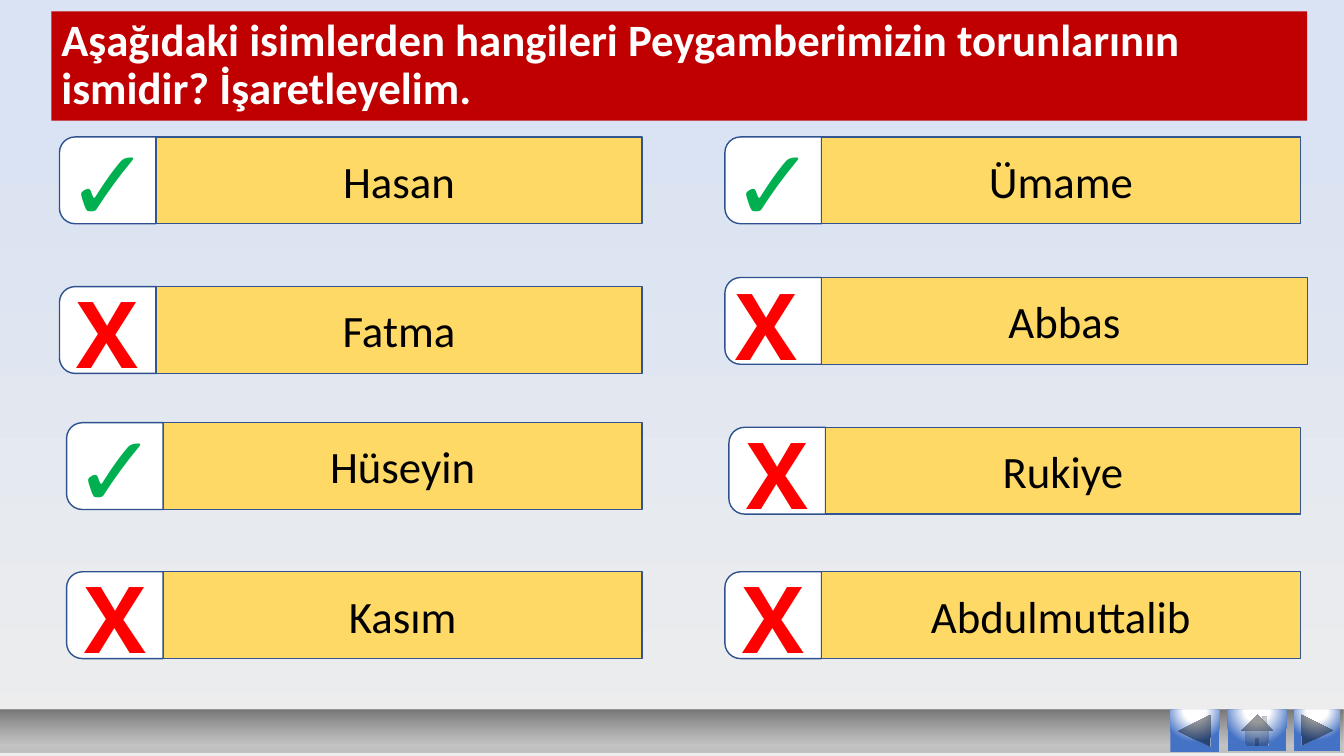
from dataclasses import dataclass
from typing import NamedTuple

from lxml import etree
from pptx import Presentation
from pptx.dml.color import RGBColor
from pptx.enum.shapes import MSO_SHAPE
from pptx.enum.text import MSO_ANCHOR, PP_ALIGN
from pptx.oxml.ns import qn
from pptx.util import Pt

RECTANGLE = MSO_SHAPE.RECTANGLE
ROUNDED_END = MSO_SHAPE.ROUND_2_SAME_RECTANGLE
BACK = MSO_SHAPE.ACTION_BUTTON_BACK_OR_PREVIOUS
HOME = MSO_SHAPE.ACTION_BUTTON_HOME
FORWARD = MSO_SHAPE.ACTION_BUTTON_FORWARD_OR_NEXT
MIDDLE, TOP = MSO_ANCHOR.MIDDLE, MSO_ANCHOR.TOP
LEFT, CENTER = PP_ALIGN.LEFT, PP_ALIGN.CENTER


class Box(NamedTuple):
    left: float
    top: float
    width: float
    height: float

    def lengths(self):
        return [Pt(value) for value in self]


class TextStyle(NamedTuple):
    font: str
    size: float
    color: str
    bold: bool
    align: PP_ALIGN


class Mark(NamedTuple):
    text: str
    style: TextStyle
    offset: Box
    wrap: bool


@dataclass(frozen=True)
class Theme:
    title_fill: str = "C00000"
    name_fill: str = "FFD966"
    name_line: str = "325491"
    check_fill: str = "FFFFFF"
    check_line: str = "2F528F"
    title: TextStyle = TextStyle("Calibri", 32, "FFFFFF", True, LEFT)
    name: TextStyle = TextStyle("Calibri", 32, "000000", False, CENTER)
    right: TextStyle = TextStyle("Roboto Slab", 72, "00B050", True, CENTER)
    wrong: TextStyle = TextStyle("Open Sans", 66, "FF0000", True, CENTER)
    background: tuple = ((0, "EDEDED", 100), (84, "DAE3F3", 100))
    bar: tuple = ((0, "C0C0C0", 100), (17, "B3B3B3", 70), (100, "777777", 100))
    button: tuple = ((0, "FFFFFF", 100), (35, "FFFFFF", 100), (100, "4472C4", 100))


THEME = Theme()
CARD_HEIGHT = 62
CHECK_WIDTH = 69
RIGHT = Mark("✓", THEME.right, Box(-16.6, -15.1, 103, 94.3), True)
WRONG = Mark("X", THEME.wrong, Box(5, -11, 59, 87.1), False)
WRONG_AT_EDGE = WRONG._replace(offset=Box(0, -10.4, 59, 87.1))

ANSWERS = [
    ("Hasan", 42.5, 97.8, 458.6, RIGHT),
    ("Fatma", 42.5, 204.7, 458.6, WRONG),
    ("Hüseyin", 47.6, 301.9, 458.6, RIGHT),
    ("Kasım", 47.6, 408.4, 458.6, WRONG),
    ("Ümame", 517.8, 97.8, 928.8, RIGHT),
    ("Abbas", 517.8, 198.2, 934, WRONG_AT_EDGE),
    ("Rukiye", 520.7, 305.2, 928.8, WRONG),
    ("Abdulmuttalib", 517.8, 408.4, 928.8, WRONG),
]


def paint_gradient(element, fill, stops, radial=False):
    fill.gradient()
    gradient = next(element.iter(qn("a:gradFill")))
    for child in list(gradient):
        gradient.remove(child)
    stop_list = etree.SubElement(gradient, qn("a:gsLst"))
    for position, color, opacity in stops:
        stop = etree.SubElement(stop_list, qn("a:gs"), pos=str(position * 1000))
        tone = etree.SubElement(stop, qn("a:srgbClr"), val=color)
        if opacity < 100:
            etree.SubElement(tone, qn("a:alpha"), val=str(opacity * 1000))
    if radial:
        circle = etree.SubElement(gradient, qn("a:path"), {"path": "circle"})
        etree.SubElement(circle, qn("a:fillToRect"),
                         l="50000", t="-80000", r="50000", b="180000")
    else:
        etree.SubElement(gradient, qn("a:lin"), ang="16200000", scaled="0")


def add_panel(slide, kind, box, fill=None, line=None):
    shape = slide.shapes.add_shape(kind, *box.lengths())
    shape.shadow.inherit = False
    if fill:
        shape.fill.solid()
        shape.fill.fore_color.rgb = RGBColor.from_string(fill)
    if line:
        shape.line.color.rgb = RGBColor.from_string(line)
        shape.line.width = Pt(1)
    else:
        shape.line.fill.background()
    return shape


def write(shape, text, style, anchor=MIDDLE, wrap=True):
    frame = shape.text_frame
    frame.word_wrap = wrap
    frame.vertical_anchor = anchor
    paragraph = frame.paragraphs[0]
    paragraph.text = text
    paragraph.alignment = style.align
    paragraph.font.name = style.font
    paragraph.font.size = Pt(style.size)
    paragraph.font.bold = style.bold
    paragraph.font.color.rgb = RGBColor.from_string(style.color)
    return paragraph


def add_title(slide, box, text):
    banner = add_panel(slide, RECTANGLE, box, THEME.title_fill)
    write(banner, text, THEME.title).line_spacing = 0.9


def add_answer(slide, box, name, mark):
    inset = (CHECK_WIDTH - box.height) / 2
    upright = Box(box.left + inset, box.top - inset, box.height, CHECK_WIDTH)
    check = add_panel(slide, ROUNDED_END, upright, THEME.check_fill, THEME.check_line)
    check.rotation = 270
    check.adjustments[0] = 0.18

    name_box = Box(box.left + CHECK_WIDTH, box.top, box.width - CHECK_WIDTH, box.height)
    panel = add_panel(slide, RECTANGLE, name_box, THEME.name_fill, THEME.name_line)
    write(panel, name, THEME.name)

    mark_box = mark.offset._replace(left=box.left + mark.offset.left,
                                    top=box.top + mark.offset.top)
    text_box = slide.shapes.add_textbox(*mark_box.lengths())
    write(text_box, mark.text, mark.style, TOP, mark.wrap)


def add_navigation(slide, box):
    bar = add_panel(slide, RECTANGLE, box)
    paint_gradient(bar.element, bar.fill, THEME.bar)
    right = box.left + box.width
    buttons = [(BACK, 124, 34.8, 30.5), (HOME, 83, 41.8, 29.5), (FORWARD, 35.5, 32.6, 29.5)]
    for kind, from_right, width, height in buttons:
        button = add_panel(slide, kind, Box(right - from_right, box.top, width, height))
        paint_gradient(button.element, button.fill, THEME.button, radial=True)


def main():
    presentation = Presentation()
    presentation.slide_width, presentation.slide_height = Pt(960), Pt(540)
    slide = presentation.slides.add_slide(presentation.slide_layouts[6])
    paint_gradient(slide.element, slide.background.fill, THEME.background)
    add_title(slide, Box(36.7, 8.2, 897, 78),
              "Aşağıdaki isimlerden hangileri Peygamberimizin torunlarının "
              "ismidir? İşaretleyelim.")
    for name, left, top, right, mark in ANSWERS:
        add_answer(slide, Box(left, top, right - left, CARD_HEIGHT), name, mark)
    add_navigation(slide, Box(0, 507, 960, 30.5))
    presentation.save("out.pptx")


if __name__ == "__main__":
    main()
